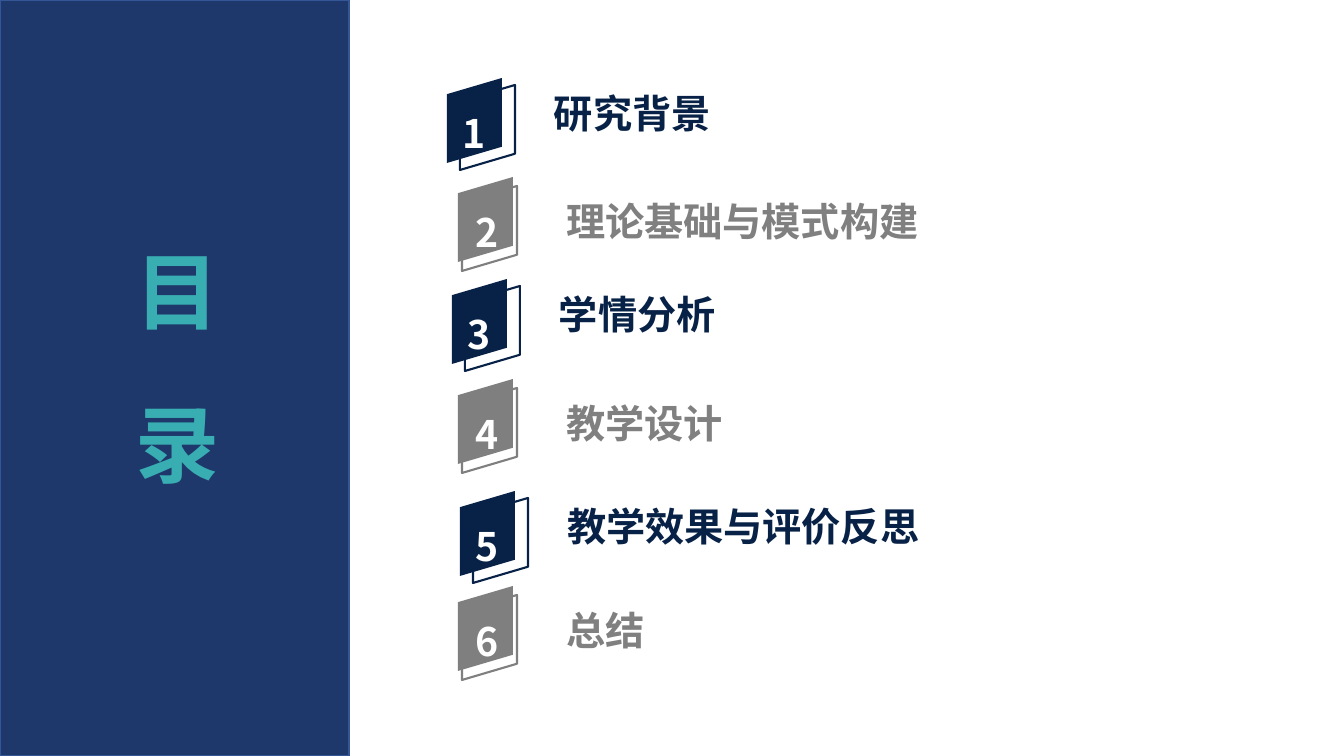
"""Build the contents slide with six numbered entries."""
from dataclasses import dataclass

from pptx import Presentation, util as u
from pptx.dml.color import RGBColor
from pptx.enum import shapes, text
from pptx.oxml import ns

SCALE = 914400 / 100.8
FONT = "Noto Sans CJK SC"
HUES = {
    "panel": "1E386B",
    "edge": "355696",
    "teal": "39AEB2",
    "navy": "082247",
    "gray": "7F7F7F",
    "ash": "808080",
    "white": "FFFFFF",
}


@dataclass(frozen=True)
class Look:
    hue: str
    ink: str
    plate: tuple[int, int]
    frame: tuple[int, int]
    label: tuple[int, int]


@dataclass(frozen=True)
class Entry:
    name: str
    left: int
    top: int


LOOKS = (
    Look("navy", "navy", (8, 13), (21, 20), (126, -2)),
    Look("gray", "ash", (6, 13), (10, 22), (125, 7)),
)
ENTRIES = (
    Entry("研究背景", 424, 80),
    Entry("理论基础与模式构建", 437, 179),
    Entry("学情分析", 429, 281),
    Entry("教学设计", 437, 381),
    Entry("教学效果与评价反思", 437, 493),
    Entry("总结", 437, 588),
)


def px(num: int) -> u.Emu:
    return u.Emu(round(num * SCALE))


def tint(hue: str) -> RGBColor:
    return RGBColor.from_string(HUES[hue])


def add_form(host, kind, box: tuple[int, ...], fill: str = "",
             line: str = "", width: float = 1):
    form = host.add_shape(kind, *map(px, box))
    form.shadow.inherit = False
    if fill:
        form.fill.solid()
        form.fill.fore_color.rgb = tint(fill)
    else:
        form.fill.background()
    if line:
        form.line.color.rgb = tint(line)
        form.line.width = u.Pt(width)
    else:
        form.line.fill.background()
    return form


def add_slant(host, left: int, top: int, fill: str = "", line: str = "") -> None:
    kind = shapes.MSO_SHAPE.PARALLELOGRAM
    form = add_form(host, kind, (left, top, 85, 55), fill, line, 1.5)
    form.adjustments[0] = 0.295
    form.rotation = 90
    form.element.spPr.find(ns.qn("a:xfrm")).set("flipV", "1")


def add_words(host, words: str, box: tuple[int, ...], size: int, hue: str,
              pitch: float, align=text.PP_ALIGN.CENTER) -> None:
    frame = host.add_textbox(*map(px, box)).text_frame
    frame.word_wrap = True
    frame.vertical_anchor = text.MSO_ANCHOR.TOP
    frame.margin_left = frame.margin_right = px(4)
    frame.margin_top = frame.margin_bottom = px(4)
    para = frame.paragraphs[0]
    para.text = words
    para.alignment = align
    para.line_spacing = u.Pt(pitch)
    for run in para.runs:
        font = run.font
        font.size = u.Pt(size)
        font.bold = True
        font.name = FONT
        font.color.rgb = tint(hue)
        mark = run._r.get_or_add_rPr().makeelement(ns.qn("a:ea"), {"typeface": FONT})
        run._r.rPr.append(mark)


def add_entry(slide, rank: int, item: Entry) -> None:
    look = LOOKS[(rank - 1) % 2]
    host = slide.shapes.add_group_shape().shapes
    left, top = item.left, item.top
    add_slant(host, left + look.plate[0], top + look.plate[1], fill=look.hue)
    add_slant(host, left + look.frame[0], top + look.frame[1], line=look.hue)
    add_words(host, str(rank), (left, top, 101, 101), 28, "white", 52)
    place = (left + look.label[0], top + look.label[1], 717, 101)
    add_words(host, item.name, place, 28, look.ink, 39, text.PP_ALIGN.LEFT)


def main() -> None:
    deck = Presentation()
    deck.slide_width, deck.slide_height = px(1344), px(756)
    slide = deck.slides.add_slide(deck.slide_layouts[6])
    add_form(slide.shapes, shapes.MSO_SHAPE.RECTANGLE, (0, 0, 349, 756),
             "panel", "edge")
    add_words(slide.shapes, "目\v录", (96, 183, 163, 226), 60, "teal", 109.5)
    for rank, item in enumerate(ENTRIES, 1):
        add_entry(slide, rank, item)
    deck.save("out.pptx")


if __name__ == "__main__":
    main()
